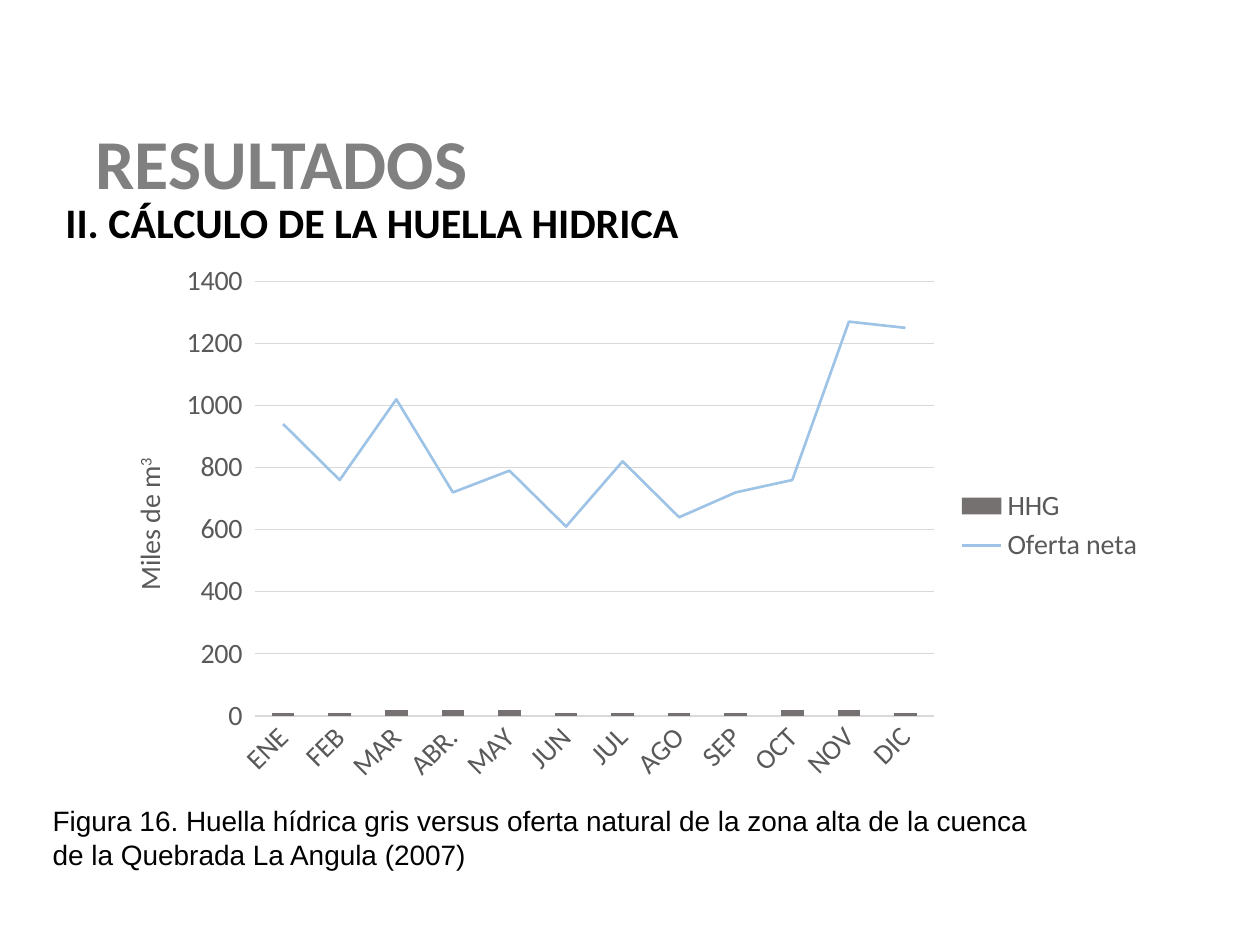
import copy

import pptx
import pptx.chart.data
import pptx.dml.color
import pptx.enum.chart
import pptx.enum.text
import pptx.oxml
import pptx.oxml.ns
import pptx.util

COLORS = {"black": "000000", "heading": "808080", "label": "595959",
          "grid": "D9D9D9", "footprint": "767171", "supply": "9DC3E6"}
MONTHS = ["ENE", "FEB", "MAR", "ABR.", "MAY", "JUN",
          "JUL", "AGO", "SEP", "OCT", "NOV", "DIC"]
FOOTPRINT = [10, 10, 20, 20, 20, 10, 10, 10, 10, 20, 20, 10]
SUPPLY = [940, 760, 1020, 720, 790, 610, 820, 640, 720, 760, 1270, 1250]
WIDTH, HEIGHT = pptx.util.Inches(10), pptx.util.Inches(7.5)
TITLE_BOX = (0.066, 0.101, 0.862, 0.151)
SUBTITLE_BOX = (0.042, 0.201, 0.911, 0.067)
CHART_BOX = (0.076, 0.269, 0.842, 0.575)
CAPTION_BOX = (0.032, 0.844, 0.813, 0.125)


def color(name):
    """Return the named colour."""
    return pptx.dml.color.RGBColor.from_string(COLORS[name])


def place(box):
    """Turn shares of the slide into lengths."""
    return [round(share * side) for share, side in zip(box, (WIDTH, HEIGHT) * 2)]


def set_font(font, size, tint, name="Calibri", bold=False):
    """Set the look of a font."""
    font.name, font.size, font.bold = name, pptx.util.Pt(size), bold
    font.color.rgb = color(tint)


def set_line(line, tint, width):
    """Set the colour and width of a line."""
    line.color.rgb = color(tint)
    line.width = pptx.util.Pt(width)


def add_text(page, box, text, size, tint, name="Calibri", bold=False,
             anchor=pptx.enum.text.MSO_ANCHOR.TOP, spacing=1.0):
    """Place one paragraph of text in the box."""
    frame = page.shapes.add_textbox(*place(box)).text_frame
    frame.word_wrap = True
    frame.vertical_anchor = anchor
    para = frame.paragraphs[0]
    para.text = text
    para.line_spacing = spacing
    set_font(para.font, size, tint, name, bold)


def remove_parts(parent, tag):
    """Remove the children that have the tag."""
    for part in parent.findall(pptx.oxml.ns.qn(tag)):
        parent.remove(part)


def add_layout(parent, values, inner=False):
    """Fix the place of a chart part by shares of the chart."""
    remove_parts(parent, "c:layout")
    target = '<c:layoutTarget val="inner"/>' if inner else ""
    modes = "".join(f'<c:{key}Mode val="edge"/>' for key in "xy")
    sizes = "".join(f'<c:{key} val="{value}"/>' for key, value in zip("xywh", values))
    layout = pptx.oxml.parse_xml(
        f'<c:layout {pptx.oxml.ns.nsdecls("c")}><c:manualLayout>'
        f'{target}{modes}{sizes}</c:manualLayout></c:layout>')
    text = parent.find(pptx.oxml.ns.qn("c:tx"))
    parent.insert(0 if text is None else 1, layout)


def move_to_line(chart):
    """Draw the last series as a line on the axes of the columns."""
    bars = chart.plots[0]
    series = bars.series[1]._element
    group = bars._element
    lines = pptx.oxml.parse_xml(
        f'<c:lineChart {pptx.oxml.ns.nsdecls("c")}><c:grouping val="standard"/>'
        '<c:varyColors val="0"/><c:marker val="1"/></c:lineChart>')
    remove_parts(series, "c:invertIfNegative")
    lines.insert(2, series)
    for axis in group.findall(pptx.oxml.ns.qn("c:axId")):
        lines.append(copy.deepcopy(axis))
    group.addnext(lines)


def style_axes(chart):
    """Set the axes, their labels and the value title."""
    months, values = chart.category_axis, chart.value_axis
    for axis in (months, values):
        set_font(axis.tick_labels.font, 16, "label")
    months.major_tick_mark = pptx.enum.chart.XL_TICK_MARK.NONE
    set_line(months.format.line, "grid", 0.75)
    months._element.find(pptx.oxml.ns.qn("c:txPr")).bodyPr.set("rot", "-2700000")
    values.minimum_scale, values.maximum_scale, values.major_unit = 0, 1400, 200
    values.format.line.fill.background()
    set_line(values.major_gridlines.format.line, "grid", 0.75)
    title = values.axis_title
    frame = title.text_frame
    frame._txBody.bodyPr.set("rot", "-5400000")
    frame._txBody.bodyPr.set("vert", "horz")
    para = frame.paragraphs[0]
    for text in ("Miles de m", "3"):
        span = para.add_run()
        span.text = text
        set_font(span.font, 16, "label")
    span._r.get_or_add_rPr().set("baseline", "30000")
    add_layout(title._element, (0.03, 0.37))


def add_supply_chart(page, box):
    """Place the chart of columns and a line in the box."""
    data = pptx.chart.data.CategoryChartData()
    data.categories = MONTHS
    data.add_series("HHG", FOOTPRINT)
    data.add_series("Oferta neta", SUPPLY)
    chart = page.shapes.add_chart(
        pptx.enum.chart.XL_CHART_TYPE.COLUMN_CLUSTERED, *place(box), data).chart
    set_font(chart.font, 10, "black")
    chart.has_title = False
    chart.has_legend = True
    chart.legend.position = pptx.enum.chart.XL_LEGEND_POSITION.RIGHT
    chart.legend.include_in_layout = False
    set_font(chart.legend.font, 16, "label")
    move_to_line(chart)
    columns, lines = chart.plots
    columns.gap_width = 150
    columns.vary_by_categories = False
    fill = columns.series[0].format.fill
    fill.solid()
    fill.fore_color.rgb = color("footprint")
    supply = lines.series[0]
    supply.smooth = False
    supply.marker.style = pptx.enum.chart.XL_MARKER_STYLE.NONE
    set_line(supply.format.line, "supply", 1.5)
    style_axes(chart)
    add_layout(chart._chartSpace.chart.plotArea, (0.15, 0.05, 0.64, 0.8), inner=True)


def build_results(page):
    """Fill the results slide."""
    add_text(page, SUBTITLE_BOX, "II. CÁLCULO DE LA HUELLA HIDRICA", 24, "black", bold=True)
    add_text(page, TITLE_BOX, "RESULTADOS", 40, "heading", bold=True,
             anchor=pptx.enum.text.MSO_ANCHOR.MIDDLE, spacing=0.9)
    add_text(page, CAPTION_BOX,
             "Figura 16. Huella hídrica gris versus oferta natural de la zona alta "
             "de la cuenca de la Quebrada La Angula (2007)", 16, "black", "Arial")
    add_supply_chart(page, CHART_BOX)


def main():
    """Build and save the deck."""
    deck = pptx.Presentation()
    deck.slide_width, deck.slide_height = WIDTH, HEIGHT
    build_results(deck.slides.add_slide(deck.slide_layouts[6]))
    deck.save("out.pptx")


if __name__ == "__main__":
    main()
